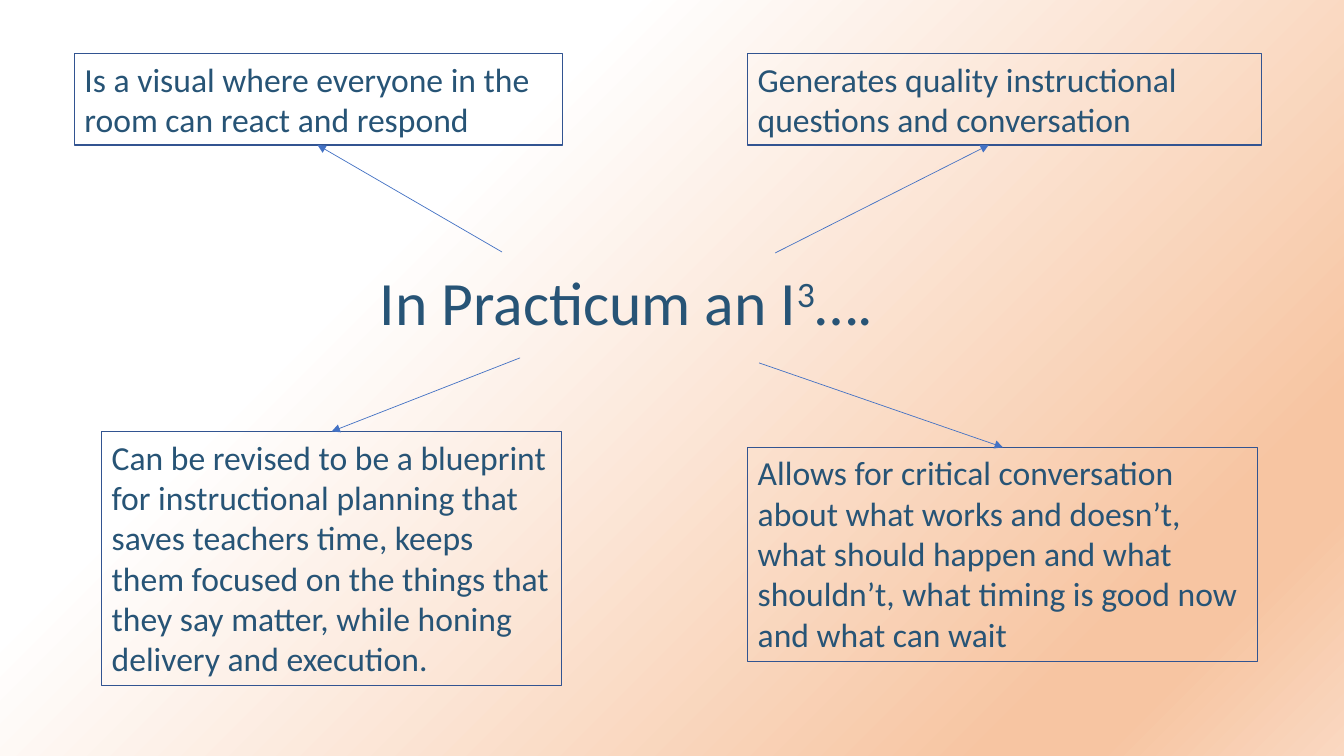
from lxml.etree import SubElement
from pptx import Presentation
from pptx.dml.color import RGBColor
from pptx.enum.shapes import MSO_CONNECTOR, MSO_SHAPE
from pptx.enum.text import MSO_ANCHOR, MSO_AUTO_SIZE, PP_ALIGN
from pptx.oxml.ns import qn
from pptx.util import Pt

COLORS = {"text": "275476", "border": "325491", "arrow": "4472C4"}
FONT = "Calibri"
BACKDROP = [(30, "FFFFFF"), (83, "F7C5A2"), (88, "F7C5A2"), (100, "FAD8C1")]
TITLE = ["In Practicum an I", "3", "…."]
TITLE_AREA = (264.3, 166.3, 380.2, 104.4)
BENEFITS = [
    {"text": "Is a visual where everyone in the room can react and respond",
     "area": (53.3, 38.2, 348.5, 65.4), "start": (358.6, 180), "tip_x": 226.8},
    {"text": "Generates quality instructional questions and conversation",
     "area": (534.2, 38.2, 367.2, 65.4), "start": (553.7, 180.7), "tip_x": 706.3},
    {"text": "Allows for critical conversation about what works and doesn’t, "
             "what should happen and what shouldn’t, what timing is good now "
             "and what can wait",
     "area": (534.2, 319.5, 364.3, 152.7), "start": (542.2, 259.2), "tip_x": 716.4},
    {"text": "Can be revised to be a blueprint for instructional planning that "
             "saves teachers time, keeps them focused on the things that they "
             "say matter, while honing delivery and execution.",
     "area": (72.7, 308.2, 328.5, 181.4), "start": (371.5, 255.6), "tip_x": 236.9},
]


def rgb(name):
    return RGBColor.from_string(COLORS[name])


def style_run(run, size):
    run.font.name = FONT
    run.font.size = Pt(size)
    run.font.color.rgb = rgb("text")


def paint_background(slide):
    fill = slide.background.fill
    fill.gradient()
    fill.gradient_angle = 315
    stops = slide.element.find(".//" + qn("a:gsLst"))
    for stop in list(stops):
        stops.remove(stop)
    for percent, color in BACKDROP:
        stop = SubElement(stops, qn("a:gs"), pos=str(percent * 1000))
        SubElement(stop, qn("a:srgbClr"), val=color)


def add_title(slide):
    title = slide.shapes.add_textbox(*map(Pt, TITLE_AREA))
    frame = title.text_frame
    frame.word_wrap = True
    frame.auto_size = MSO_AUTO_SIZE.NONE
    frame.vertical_anchor = MSO_ANCHOR.MIDDLE
    line = frame.paragraphs[0]
    line.line_spacing = 0.9
    for part in TITLE:
        run = line.add_run()
        run.text = part
        style_run(run, 44)
    line.runs[1].font.element.set("baseline", "30000") if hasattr(
        line.runs[1].font, "element") else line.runs[1]._r.get_or_add_rPr().set(
        "baseline", "30000")


def add_benefit(slide, text, area):
    box = slide.shapes.add_shape(MSO_SHAPE.RECTANGLE, *map(Pt, area))
    box.shadow.inherit = False
    box.fill.background()
    box.line.color.rgb = rgb("border")
    box.line.width = Pt(0.75)
    frame = box.text_frame
    frame.word_wrap = True
    frame.auto_size = MSO_AUTO_SIZE.SHAPE_TO_FIT_TEXT
    frame.vertical_anchor = MSO_ANCHOR.TOP
    frame.text = text
    frame.paragraphs[0].alignment = PP_ALIGN.LEFT
    style_run(frame.paragraphs[0].runs[0], 24)


def add_arrow(slide, start, tip_x, area):
    top, height = area[1], area[3]
    tip_y = top if top > start[1] else top + height
    arrow = slide.shapes.add_connector(
        MSO_CONNECTOR.STRAIGHT, *map(Pt, (*start, tip_x, tip_y)))
    arrow.line.color.rgb = rgb("arrow")
    arrow.line.width = Pt(0.5)
    SubElement(arrow.line._get_or_add_ln(), qn("a:tailEnd"), type="triangle")
    SubElement(arrow.element.spPr, qn("a:effectLst"))


def main():
    deck = Presentation()
    deck.slide_width, deck.slide_height = Pt(960), Pt(540)
    slide = deck.slides.add_slide(deck.slide_layouts[6])
    paint_background(slide)
    add_title(slide)
    for benefit in BENEFITS:
        add_benefit(slide, benefit["text"], benefit["area"])
    for benefit in BENEFITS:
        add_arrow(slide, benefit["start"], benefit["tip_x"], benefit["area"])
    deck.save("out.pptx")


if __name__ == "__main__":
    main()
